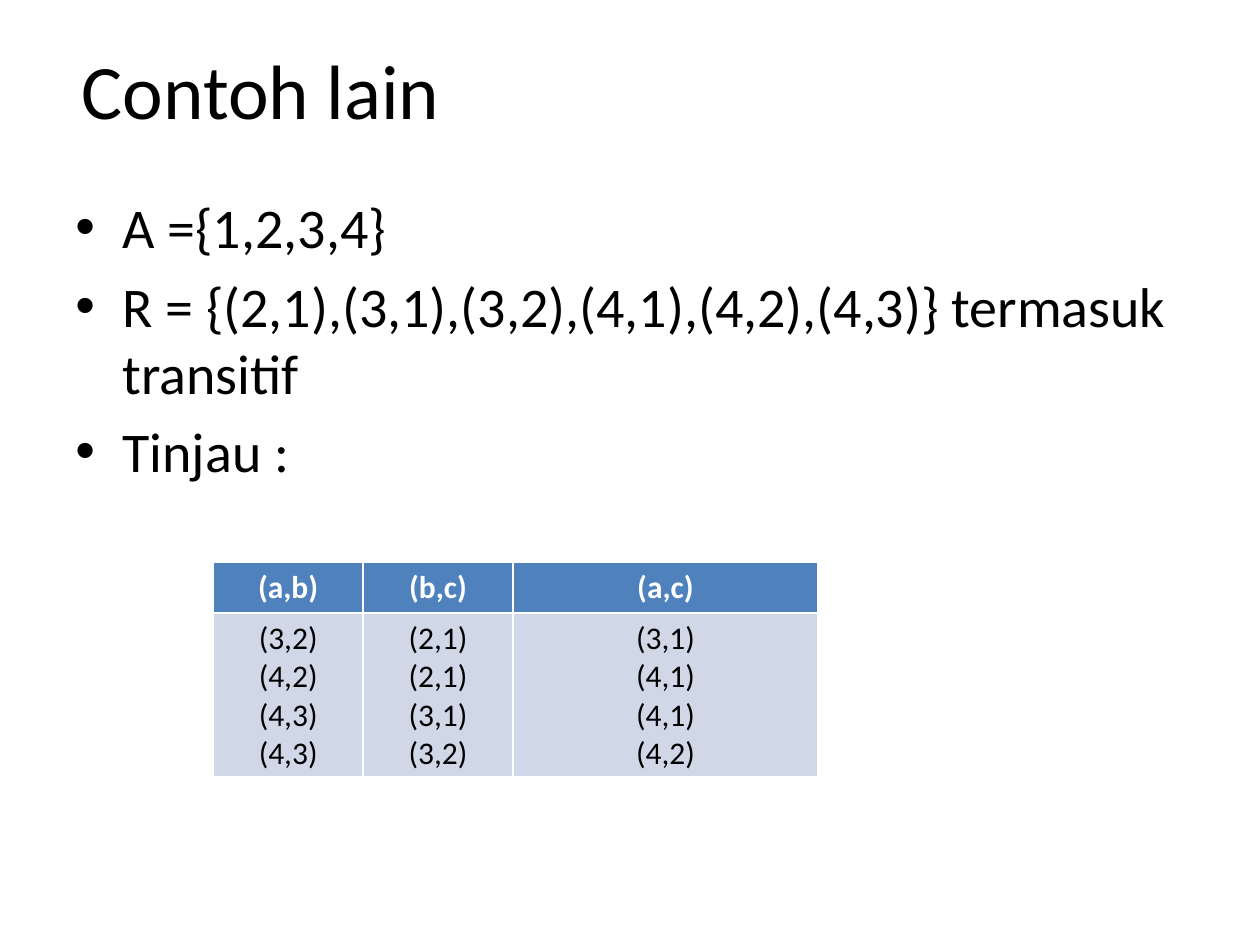
from lxml.etree import SubElement
from pptx import Presentation
from pptx.dml.color import RGBColor
from pptx.enum.text import MSO_ANCHOR, PP_ALIGN
from pptx.oxml.ns import qn
from pptx.util import Cm, Pt

BLACK = RGBColor(0x00, 0x00, 0x00)
WHITE = RGBColor(0xFF, 0xFF, 0xFF)
HEADER_BLUE = RGBColor(0x4F, 0x81, 0xBD)
BODY_BLUE = RGBColor(0xD0, 0xD8, 0xE8)

STATEMENTS = [
    "A ={1,2,3,4}",
    "R = {(2,1),(3,1),(3,2),(4,1),(4,2),(4,3)} termasuk transitif",
    "Tinjau :",
]
PAIRS = {
    "(a,b)": ["(3,2)", "(4,2)", "(4,3)", "(4,3)"],
    "(b,c)": ["(2,1)", "(2,1)", "(3,1)", "(3,2)"],
    "(a,c)": ["(3,1)", "(4,1)", "(4,1)", "(4,2)"],
}
COLUMN_WIDTHS = [Cm(3.02), Cm(3.02), Cm(6.15)]
ROW_HEIGHTS = [Cm(1.03), Cm(3.3)]


def format_font(paragraph, size, color=BLACK, bold=False):
    """Apply the slide typeface with a size, colour and weight."""
    font = paragraph.font
    for name, value in {"name": "Calibri", "size": Pt(size), "bold": bold}.items():
        setattr(font, name, value)
    font.color.rgb = color


def add_bullet(paragraph):
    """Give a paragraph a round bullet with a hanging indent."""
    properties = paragraph._p.get_or_add_pPr()
    for name, value in {"marL": Cm(0.95), "indent": Cm(-0.95)}.items():
        properties.set(name, str(int(value)))
    SubElement(properties, qn("a:buFont"), typeface="Arial")
    SubElement(properties, qn("a:buChar"), char="•")


def add_text(slide, position, lines, size, anchor=MSO_ANCHOR.TOP, bulleted=False):
    """Add a wrapped text box with one paragraph per line."""
    frame = slide.shapes.add_textbox(*position).text_frame
    for name, value in {"word_wrap": True, "vertical_anchor": anchor}.items():
        setattr(frame, name, value)
    frame.text = "\n".join(lines)
    for index, paragraph in enumerate(frame.paragraphs):
        if bulleted:
            add_bullet(paragraph)
        if index:
            paragraph.space_before = Pt(size * 0.2)
        format_font(paragraph, size)


def fill_cell(cell, lines, background, color, bold):
    """Write centred lines into a coloured table cell."""
    cell.fill.solid()
    cell.fill.fore_color.rgb = background
    cell.text = "\n".join(lines)
    for paragraph in cell.text_frame.paragraphs:
        paragraph.alignment = PP_ALIGN.CENTER
        format_font(paragraph, 18, color, bold)


def add_pair_table(slide, left, top):
    """Add the table of linked pairs that shows transitivity."""
    table = slide.shapes.add_table(
        len(ROW_HEIGHTS), len(PAIRS), left, top, sum(COLUMN_WIDTHS), sum(ROW_HEIGHTS)
    ).table
    for row, height in zip(table.rows, ROW_HEIGHTS):
        row.height = height
    for index, (heading, pairs) in enumerate(PAIRS.items()):
        table.columns[index].width = COLUMN_WIDTHS[index]
        fill_cell(table.cell(0, index), [heading], HEADER_BLUE, WHITE, True)
        fill_cell(table.cell(1, index), pairs, BODY_BLUE, BLACK, False)


def main():
    """Build and save the slide."""
    presentation = Presentation()
    presentation.slide_width = Cm(25.4)
    presentation.slide_height = Cm(19.05)
    slide = presentation.slides.add_slide(presentation.slide_layouts[6])
    title_area = Cm(1.4), Cm(0.2), Cm(22.86), Cm(3.18)
    statement_area = Cm(1.27), Cm(3.76), Cm(22.86), Cm(13.26)
    add_text(slide, title_area, ["Contoh lain"], 44, MSO_ANCHOR.MIDDLE)
    add_text(slide, statement_area, STATEMENTS, 32, bulleted=True)
    add_pair_table(slide, Cm(4.3), Cm(11.33))
    presentation.save("out.pptx")


if __name__ == "__main__":
    main()
